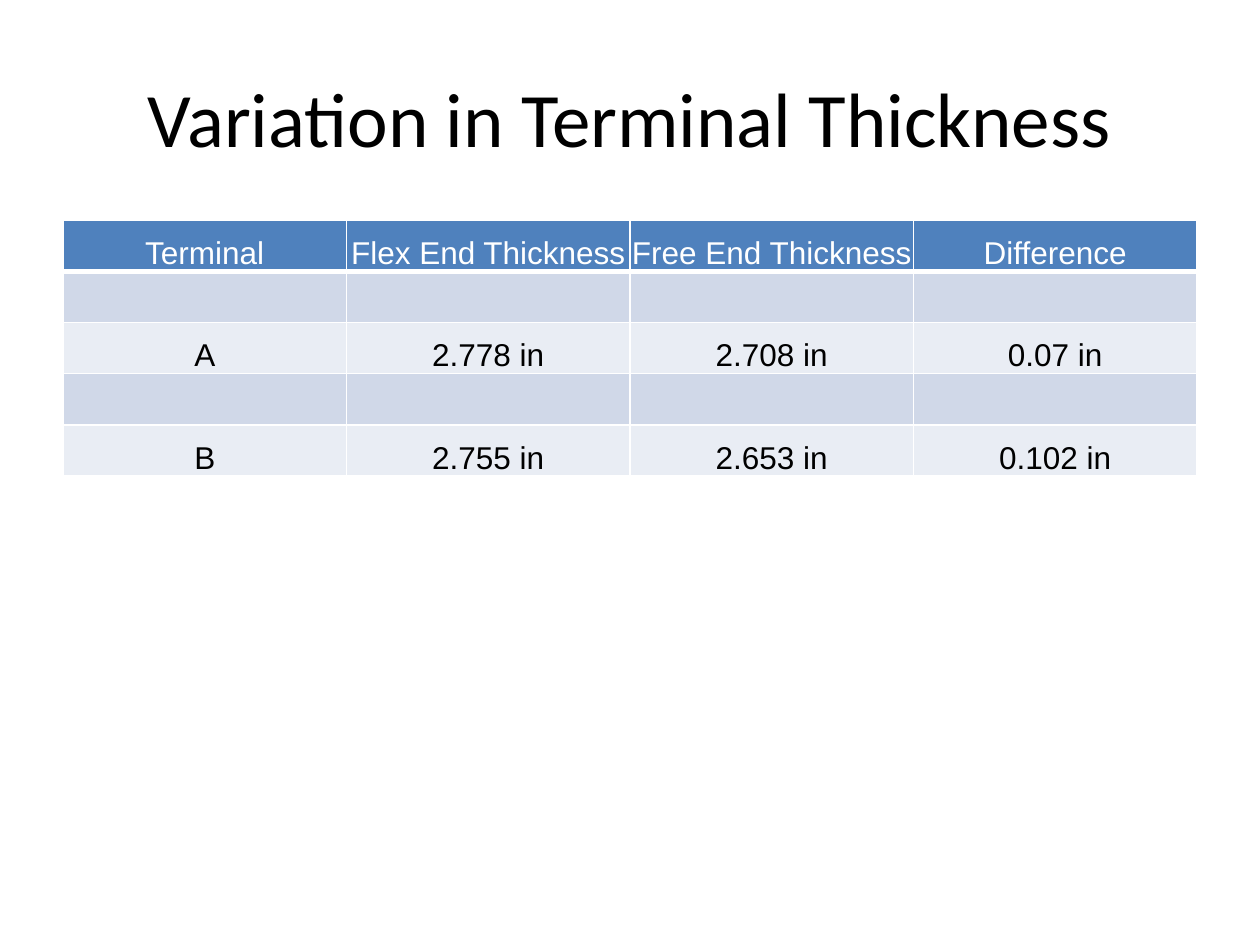
from dataclasses import dataclass

from lxml.etree import SubElement
from pptx import Presentation
from pptx.dml.color import RGBColor
from pptx.enum.text import MSO_ANCHOR, PP_ALIGN
from pptx.oxml.ns import qn
from pptx.util import Emu, Pt

PX_PER_INCH = 126


@dataclass(frozen=True)
class Theme:
    ink: str = "000000"
    paper: str = "FFFFFF"
    header: str = "4F81BD"
    bands: tuple = ("D0D8E8", "E9EDF4")
    title_font: str = "Calibri"
    table_font: str = "Arial"
    title_size: int = 44
    table_size: int = 18
    rule: int = 1
    header_rule: int = 3


THEME = Theme()

THICKNESSES = [
    ["Terminal", "Flex End Thickness", "Free End Thickness", "Difference"],
    ["", "", "", ""],
    ["A", "2.778 in", "2.708 in", "0.07 in"],
    ["", "", "", ""],
    ["B", "2.755 in", "2.653 in", "0.102 in"],
]


def px(length):
    return Emu(round(length * 914400 / PX_PER_INCH))


def write(frame, text, *, font, size, color, align=PP_ALIGN.CENTER):
    frame.word_wrap = True
    paragraph = frame.paragraphs[0]
    paragraph.alignment = align
    paragraph.font.size = Pt(size)
    if text:
        run = paragraph.add_run()
        run.text = text
        run.font.name = font
        run.font.size = Pt(size)
        run.font.color.rgb = RGBColor.from_string(color)


def rule_cell(cell, widths):
    properties = cell._tc.get_or_add_tcPr()
    for position, (side, width) in enumerate(widths.items()):
        line = SubElement(properties, qn(f"a:{side}"), w=str(Pt(width)))
        fill = SubElement(line, qn("a:solidFill"))
        SubElement(fill, qn("a:srgbClr"), val=THEME.paper)
        properties.insert(position, line)


def add_title(slide, text, left, top, width, height):
    title = slide.shapes.add_textbox(px(left), px(top), px(width), px(height))
    title.text_frame.vertical_anchor = MSO_ANCHOR.MIDDLE
    write(title.text_frame, text, font=THEME.title_font,
          size=THEME.title_size, color=THEME.ink)


def fill_cell(cell, text, row):
    is_header = row == 0
    cell.margin_left = cell.margin_right = 0
    cell.margin_top = cell.margin_bottom = 0
    cell.vertical_anchor = MSO_ANCHOR.BOTTOM
    cell.fill.solid()
    shade = THEME.header if is_header else THEME.bands[(row - 1) % 2]
    cell.fill.fore_color.rgb = RGBColor.from_string(shade)
    write(cell.text_frame, text, font=THEME.table_font, size=THEME.table_size,
          color=THEME.paper if is_header else THEME.ink)
    rule_cell(cell, {
        "lnL": THEME.rule,
        "lnR": THEME.rule,
        "lnT": THEME.header_rule if row == 1 else THEME.rule,
        "lnB": THEME.header_rule if is_header else THEME.rule,
    })


def add_thickness_table(slide, records, left, top, width, height):
    table = slide.shapes.add_table(
        len(records), len(records[0]),
        px(left), px(top), px(width), px(height)).table
    for column in table.columns:
        column.width = px(width / len(records[0]))
    for row, record in enumerate(records):
        table.rows[row].height = px(height / len(records))
        for column, text in enumerate(record):
            fill_cell(table.cell(row, column), text, row)


def main():
    deck = Presentation()
    deck.slide_width, deck.slide_height = px(1260), px(945)
    slide = deck.slides.add_slide(deck.slide_layouts[6])
    add_title(slide, "Variation in Terminal Thickness", 63, 38, 1134, 158)
    add_thickness_table(slide, THICKNESSES, 63, 220, 1134, 256)
    deck.save("out.pptx")


if __name__ == "__main__":
    main()
